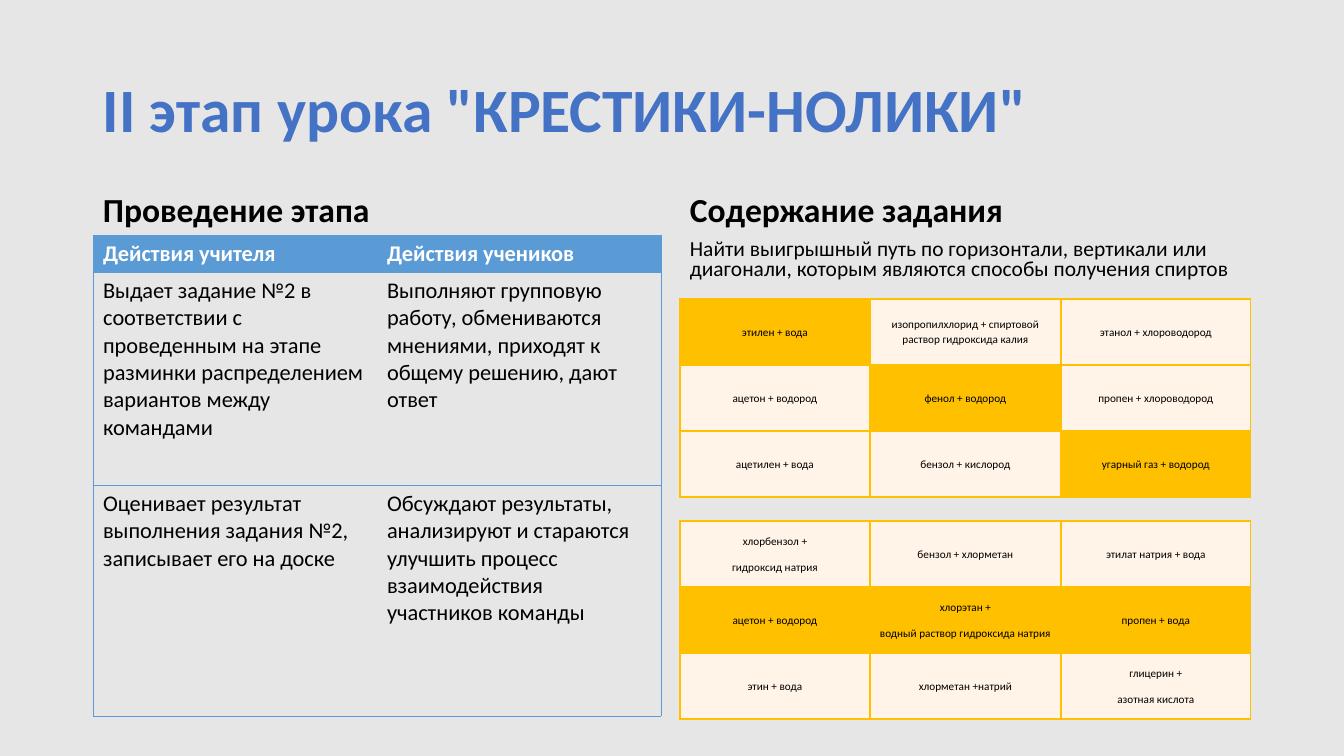
import pptx
import pptx.util
import pptx.dml.color
import pptx.enum.text
import lxml.etree

Pt = pptx.util.Pt
Anchor = pptx.enum.text.MSO_ANCHOR
Align = pptx.enum.text.PP_ALIGN
EMU = 914400 / 100.8
NS = "http://schemas.openxmlformats.org/drawingml/2006/main"
PLAIN = "{2D5ABB26-0587-4C30-8999-92F81FD0307C}"
BLUE, GOLD, CREAM = "5B9BD5", "FFC000", "FFF4E7"


def px(n):
    return round(n * EMU)


def tint(code):
    return pptx.dml.color.RGBColor.from_string(code)


class Page:
    font = "Calibri"

    def __init__(self, deck, back):
        self.slide = deck.slides.add_slide(deck.slide_layouts[6])
        fill = self.slide.background.fill
        fill.solid()
        fill.fore_color.rgb = tint(back)

    def runs(self, frame, text, size, color="000000", bold=False,
             align=Align.LEFT, lead=1.0, above=0, below=0):
        for i, line in enumerate(text.split("\n")):
            para = frame.paragraphs[0] if i == 0 else frame.add_paragraph()
            para.alignment = align
            para.line_spacing = lead
            para.space_before = Pt(above)
            para.space_after = Pt(below)
            run = para.add_run()
            run.text = line
            run.font.name = self.font
            run.font.size = Pt(size)
            run.font.bold = bold
            run.font.color.rgb = tint(color)

    def text(self, box, text, size, anchor=Anchor.TOP, **style):
        frame = self.slide.shapes.add_textbox(*map(px, box)).text_frame
        frame.word_wrap = True
        frame.vertical_anchor = anchor
        self.runs(frame, text, size, **style)

    def table(self, left, top, cols, rows):
        shape = self.slide.shapes.add_table(
            len(rows), len(cols), px(left), px(top), px(sum(cols)), px(sum(rows)))
        grid = shape.table
        grid._tbl.tblPr.find(f"{{{NS}}}tableStyleId").text = PLAIN
        grid.horz_banding = False
        for col, width in zip(grid.columns, cols):
            col.width = px(width)
        for row, height in zip(grid.rows, rows):
            row.height = px(height)
        return grid

    def paint(self, cell, color):
        if color:
            cell.fill.solid()
            cell.fill.fore_color.rgb = tint(color)
        else:
            cell.fill.background()

    def border(self, cell, sides, color, width):
        props = cell._tc.get_or_add_tcPr()
        for i, side in enumerate(sides):
            line = lxml.etree.Element(f"{{{NS}}}ln{side}", w=str(Pt(width)))
            solid = lxml.etree.SubElement(line, f"{{{NS}}}solidFill")
            lxml.etree.SubElement(solid, f"{{{NS}}}srgbClr", val=color)
            props.insert(i, line)

    def steps(self, left, top, cols, rows, data):
        grid = self.table(left, top, cols, rows)
        for r, row in enumerate(data):
            for c, text in enumerate(row):
                cell, head = grid.cell(r, c), r == 0
                self.runs(cell.text_frame, text, 16,
                          color="FFFFFF" if head else "000000", bold=head)
                self.paint(cell, BLUE if head else None)
                self.border(cell, ("L" if c == 0 else "R") + "TB", BLUE, 0.5)

    def game(self, left, top, data, wins):
        grid = self.table(left, top, [190, 191, 190], [66] * 3)
        for r, row in enumerate(data):
            for c, text in enumerate(row):
                cell = grid.cell(r, c)
                cell.vertical_anchor = Anchor.MIDDLE
                cell.margin_left = cell.margin_right = px(7)
                cell.margin_top = cell.margin_bottom = 0
                self.runs(cell.text_frame, text, 8, align=Align.CENTER,
                          lead=1.07, below=8)
                self.paint(cell, GOLD if (r, c) in wins else CREAM)
                self.border(cell, "LRTB", GOLD, 1)


def main():
    deck = pptx.Presentation()
    deck.slide_width, deck.slide_height = px(1344), px(756)
    page = Page(deck, "E7E6E6")
    page.text((93, 40, 1159, 146), 'II этап урока "КРЕСТИКИ-НОЛИКИ"', 44,
              Anchor.MIDDLE, color="4472C4", bold=True, lead=0.9)
    for left, head in ((93, "Проведение этапа"), (680, "Содержание задания")):
        page.text((left, 185, 570, 50), head, 24, Anchor.BOTTOM,
                  bold=True, lead=0.9, above=10)
    page.steps(93, 235, [284, 284], [37, 213, 231], [
        ["Действия учителя", "Действия учеников"],
        ["Выдает задание №2 в соответствии с проведенным на этапе разминки "
         "распределением вариантов между командами",
         "Выполняют групповую работу, обмениваются мнениями, приходят к "
         "общему решению, дают ответ"],
        ["Оценивает результат выполнения задания №2, записывает его на доске",
         "Обсуждают результаты, анализируют и стараются улучшить процесс "
         "взаимодействия участников команды"],
    ])
    page.text((680, 235, 571, 65),
              "Найти выигрышный путь по горизонтали, вертикали или диагонали, "
              "которым являются способы получения спиртов",
              15.3, lead=0.8, above=10)
    page.game(680, 299, [
        ["этилен + вода", "изопропилхлорид + спиртовой раствор гидроксида калия",
         "этанол + хлороводород"],
        ["ацетон + водород", "фенол + водород", "пропен + хлороводород"],
        ["ацетилен + вода", "бензол + кислород", "угарный газ + водород"],
    ], {(i, i) for i in range(3)})
    page.game(680, 521, [
        ["хлорбензол +\nгидроксид натрия", "бензол + хлорметан",
         "этилат натрия + вода"],
        ["ацетон + водород", "хлорэтан +\nводный раствор гидроксида натрия",
         "пропен + вода"],
        ["этин + вода", "хлорметан +натрий", "глицерин +\nазотная кислота"],
    ], {(1, i) for i in range(3)})
    deck.save("out.pptx")


if __name__ == "__main__":
    main()
